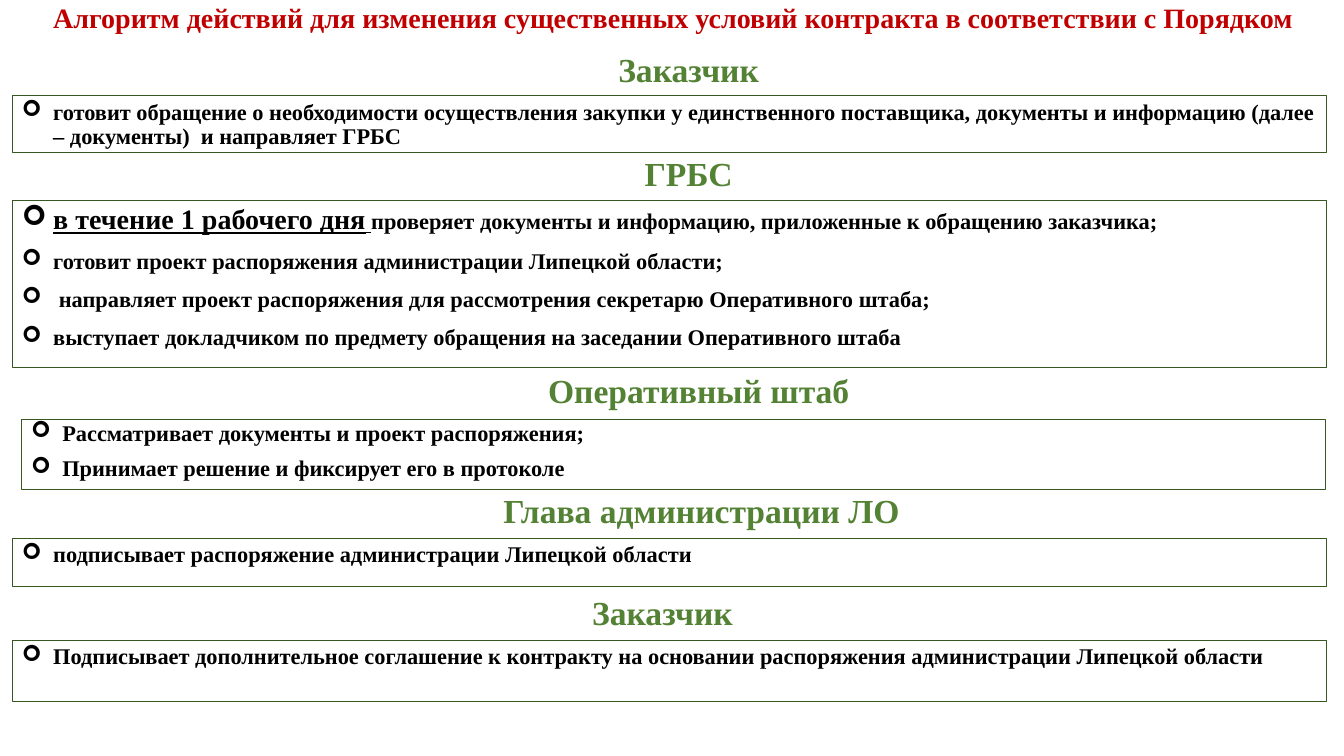
from lxml.etree import SubElement
from pptx import Presentation
from pptx.dml.color import RGBColor
from pptx.enum.shapes import MSO_SHAPE as Shape
from pptx.enum.text import MSO_ANCHOR as Anchor, MSO_AUTO_SIZE as AutoSize, PP_ALIGN as Align
from pptx.oxml.ns import qn
from pptx.util import Pt

PX = 9144
COLORS = {"title": "C00000", "actor": "548235", "border": "385723", "step": "000000"}
FONT = {"name": "Times New Roman", "bold": True}
TITLE = "Алгоритм действий для изменения существенных условий контракта в соответствии с Порядком"
DEADLINE = [
    ("в течение 1 рабочего дня", {"size": Pt(20), "underline": True}),
    (" ", {"underline": True}),
    ("проверяет документы и информацию, приложенные к обращению заказчика;", {}),
]
STAGES = [
    ("Заказчик", (183, 48), (12, 95, 1304, 56), 0.9, [
        "готовит обращение о необходимости осуществления закупки у единственного поставщика, "
        "документы и информацию (далее – документы)  и направляет ГРБС",
    ]),
    ("ГРБС", (183, 151), (12, 199, 1304, 166), 0.9, [
        DEADLINE,
        "готовит проект распоряжения администрации Липецкой области;",
        " направляет проект распоряжения для рассмотрения секретарю Оперативного штаба;",
        "выступает докладчиком по предмету обращения на заседании Оперативного штаба",
    ]),
    ("Оперативный штаб", (193, 367), (21, 416, 1294, 70), 0.8, [
        "Рассматривает документы и проект распоряжения;",
        "Принимает решение и фиксирует его в протоколе",
    ]),
    ("Глава администрации ЛО ", (200, 486), (12, 534, 1304, 48), 0.9, [
        "подписывает распоряжение администрации Липецкой области",
    ]),
    ("Заказчик", (157, 587), (12, 635, 1304, 61), 0.9, [
        "Подписывает дополнительное соглашение к контракту на основании распоряжения "
        "администрации Липецкой области",
    ]),
]


def scaled(*lengths):
    """Turn px lengths into EMU."""
    return [length * PX for length in lengths]


def apply(target, values):
    """Set each attribute in values on target."""
    for key, value in values.items():
        setattr(target, key, value)


def add_words(paragraph, words, points, color, emphasis={}):
    """Add one styled run to a paragraph."""
    run = paragraph.add_run()
    run.text = words
    apply(run.font, {**FONT, "size": Pt(points), **emphasis})
    run.font.color.rgb = RGBColor.from_string(COLORS[color])


def add_bullet(paragraph):
    """Give a paragraph an arrow bullet with a hanging indent."""
    properties = paragraph._p.get_or_add_pPr()
    properties.set("marL", str(31 * PX))
    properties.set("indent", str(-31 * PX))
    SubElement(properties, qn("a:buFont"), typeface="Wingdings")
    SubElement(properties, qn("a:buChar"), char="➢")


def fill_title(title, box):
    """Place and format the slide title."""
    apply(title, dict(zip(("left", "top", "width", "height"), scaled(*box))))
    apply(title.text_frame, {"word_wrap": True, "auto_size": AutoSize.NONE,
                             "vertical_anchor": Anchor.BOTTOM})
    heading = title.text_frame.paragraphs[0]
    apply(heading, {"alignment": Align.CENTER, "line_spacing": 0.9})
    add_words(heading, TITLE, 20, "title")


def add_actor(slide, name, left, top):
    """Add the centred name of whoever acts at a stage."""
    frame = slide.shapes.add_textbox(*scaled(left, top, 1000, 46)).text_frame
    frame.word_wrap = True
    heading = frame.paragraphs[0]
    apply(heading, {"alignment": Align.CENTER, "line_spacing": 0.9, "space_before": Pt(10)})
    add_words(heading, name, 24, "actor")


def add_steps(slide, box, spacing, steps):
    """Add the bordered list of steps of a stage."""
    panel = slide.shapes.add_shape(Shape.RECTANGLE, *scaled(*box))
    panel.shadow.inherit = False
    panel.fill.background()
    panel.line.color.rgb = RGBColor.from_string(COLORS["border"])
    panel.line.width = Pt(0.75)
    frame = panel.text_frame
    apply(frame, {"word_wrap": True, "vertical_anchor": Anchor.TOP})
    for index, step in enumerate(steps):
        line = frame.add_paragraph() if index else frame.paragraphs[0]
        apply(line, {"alignment": Align.LEFT, "line_spacing": spacing, "space_before": Pt(10)})
        add_bullet(line)
        for words, emphasis in [(step, {})] if isinstance(step, str) else step:
            add_words(line, words, 16, "step", emphasis)


def main():
    """Build the slide and save it."""
    deck = Presentation()
    apply(deck, dict(zip(("slide_width", "slide_height"), scaled(1333, 750))))
    slide = deck.slides.add_slide(deck.slide_layouts[5])
    fill_title(slide.shapes.title, (21, -1, 1294, 40))
    for actor, corner, box, spacing, steps in STAGES:
        add_actor(slide, actor, *corner)
        add_steps(slide, box, spacing, steps)
    deck.save("out.pptx")


if __name__ == "__main__":
    main()
